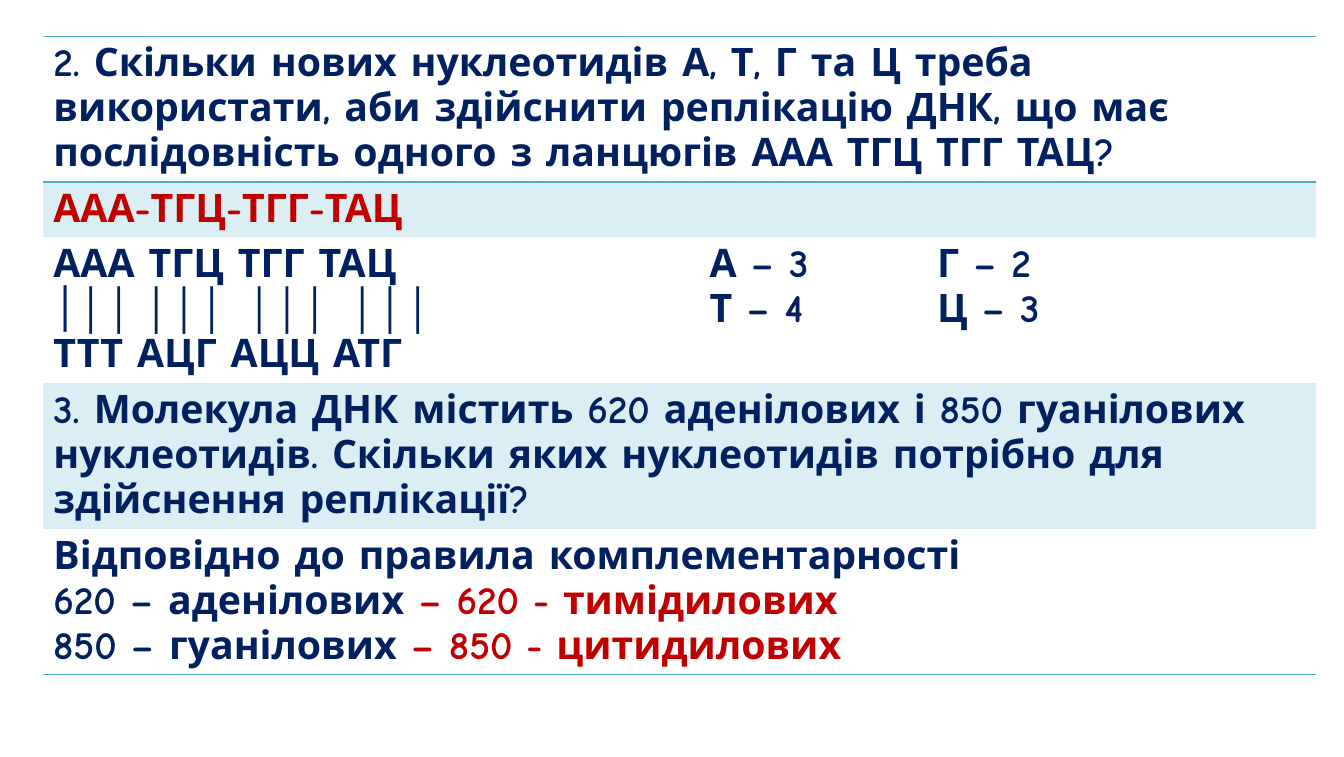
from dataclasses import dataclass

from lxml.etree import SubElement
from pptx import Presentation
from pptx.dml.color import RGBColor
from pptx.oxml.ns import qn
from pptx.table import Table, _Cell
from pptx.util import Cm, Pt

COLORS = {"navy": "002060", "red": "C00000", "teal": "4BACC6"}
BODY_FONT = "Comic Neue"
BOND_FONT = "Times New Roman"
PLAIN_TABLE_STYLE = "{2D5ABB26-0587-4C30-8999-92F81FD0307C}"
COLUMN_WIDTHS = (16.51, 5.72, 9.78)
LINE_HEIGHT = 1.14
ROW_PADDING = 0.25


@dataclass
class Span:
    text: str
    color: str = "navy"
    font: str = BODY_FONT


@dataclass
class Row:
    cells: list[list[list[Span]]]  # cells > paragraphs > spans
    lines: int = 3
    tinted: bool = False
    borders: tuple[str, ...] = ()


ROWS = [
    Row([[[Span("2. Скільки нових нуклеотидів А, Т, Г та Ц треба використати, "
                "аби здійснити реплікацію ДНК, що має послідовність одного "
                "з ланцюгів ААА ТГЦ ТГГ ТАЦ?")]]], borders=("lnT", "lnB")),
    Row([[[Span("ААА-ТГЦ-ТГГ-ТАЦ", "red")]]], lines=1, tinted=True),
    Row([
        [[Span("ААА ТГЦ ТГГ ТАЦ")],
         [Span("│"), Span("││ │││  │││  │││", font=BOND_FONT)],
         [Span("ТТТ АЦГ АЦЦ АТГ")]],
        [[Span("А – 3")], [Span("Т – 4")]],
        [[Span("Г – 2")], [Span("Ц – 3")]],
    ]),
    Row([[[Span("3. Молекула ДНК містить 620 аденілових і 850 гуанілових "
                "нуклеотидів. Скільки яких нуклеотидів потрібно для "
                "здійснення реплікації?")]]], tinted=True),
    Row([[[Span("Відповідно до правила комплементарності")],
          [Span("620 – аденілових "), Span("– 620 - тимідилових", "red")],
          [Span("850 – гуанілових "), Span("– 850 - цитидилових", "red")]]],
        borders=("lnB",)),
]


def write_cell(cell: _Cell, paragraphs: list[list[Span]]) -> None:
    frame = cell.text_frame
    for index, spans in enumerate(paragraphs):
        paragraph = frame.add_paragraph() if index else frame.paragraphs[0]
        for span in spans:
            run = paragraph.add_run()
            run.text = span.text
            font_format = {"name": span.font, "size": Pt(28), "bold": True}
            for name, value in font_format.items():
                setattr(run.font, name, value)
            run.font.color.rgb = RGBColor.from_string(COLORS[span.color])


def style_cell(cell: _Cell, row: Row) -> None:
    properties = cell._tc.get_or_add_tcPr()
    # Borders come before the fill in the cell properties
    for side in row.borders:
        line = SubElement(properties, qn(f"a:{side}"), w=str(Pt(1)))
        solid = SubElement(line, qn("a:solidFill"))
        SubElement(solid, qn("a:srgbClr"), val=COLORS["teal"])
    if row.tinted:
        cell.fill.solid()
        cell.fill.fore_color.rgb = RGBColor.from_string(COLORS["teal"])
        SubElement(next(properties.iter(qn("a:srgbClr"))), qn("a:alpha"), val="20000")
    else:
        cell.fill.background()


def fill_row(table: Table, index: int, row: Row) -> None:
    table.rows[index].height = Cm(row.lines * LINE_HEIGHT + ROW_PADDING)
    last_column = len(COLUMN_WIDTHS) - 1
    for column in range(len(COLUMN_WIDTHS)):
        style_cell(table.cell(index, column), row)
    if len(row.cells) == 1:
        table.cell(index, 0).merge(table.cell(index, last_column))
    for column, paragraphs in enumerate(row.cells):
        write_cell(table.cell(index, column), paragraphs)


def main() -> None:
    presentation = Presentation()
    presentation.slide_width, presentation.slide_height = Cm(33.81), Cm(19.05)
    slide = presentation.slides.add_slide(presentation.slide_layouts[6])

    # Table of replication problems and answers
    table_height = sum(row.lines * LINE_HEIGHT + ROW_PADDING for row in ROWS)
    table = slide.shapes.add_table(
        len(ROWS), len(COLUMN_WIDTHS), Cm(1.09), Cm(0.91),
        Cm(sum(COLUMN_WIDTHS)), Cm(table_height)).table
    for name, value in {"first_row": False, "horz_banding": False}.items():
        setattr(table, name, value)
    table._tbl.tblPr.find(qn("a:tableStyleId")).text = PLAIN_TABLE_STYLE
    for column, width in zip(table.columns, COLUMN_WIDTHS):
        column.width = Cm(width)
    for index, row in enumerate(ROWS):
        fill_row(table, index, row)

    presentation.save("out.pptx")


if __name__ == "__main__":
    main()
